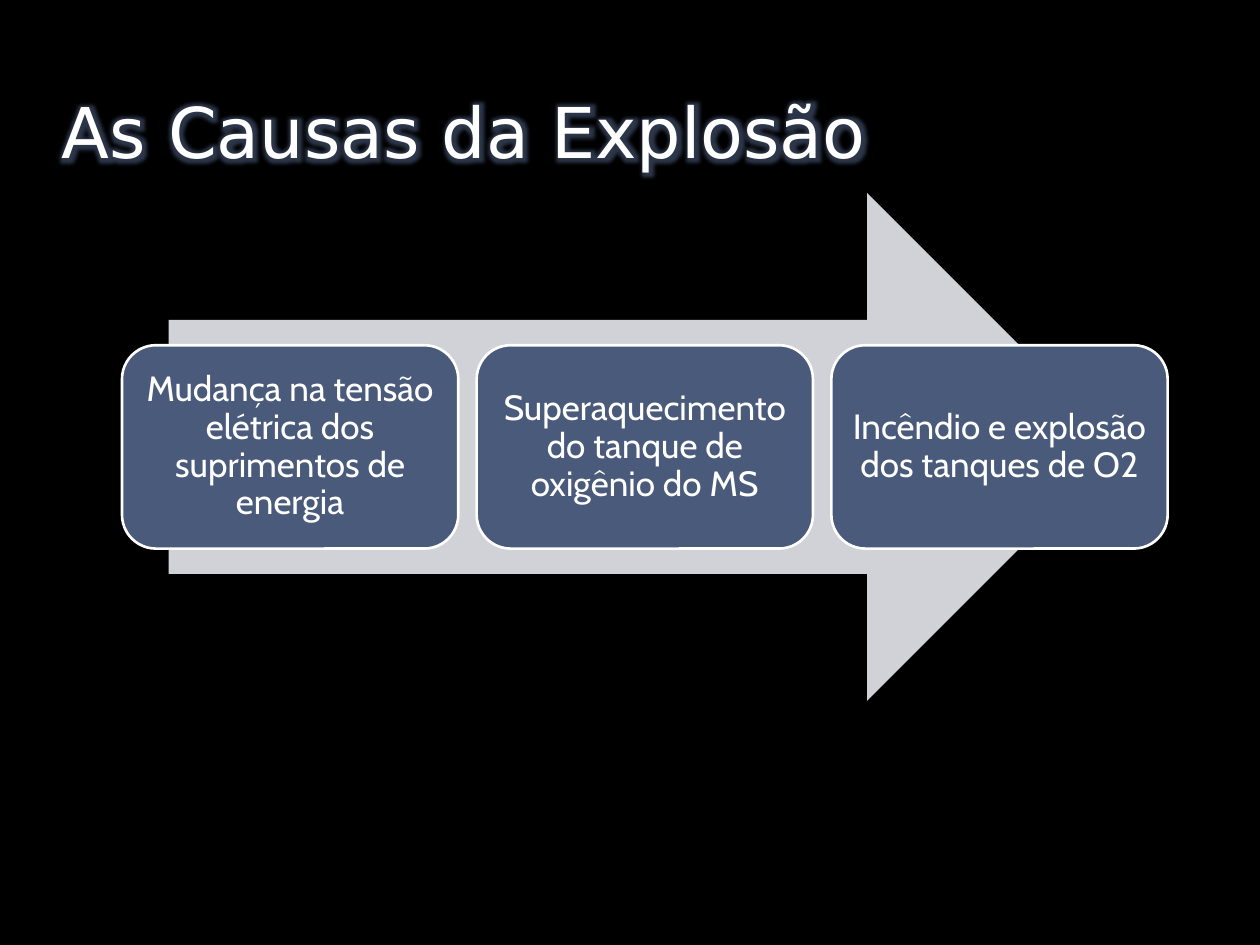
import pptx
import pptx.dml.color
import pptx.enum.shapes
import pptx.enum.text
import pptx.oxml
import pptx.util
from pptx.util import Cm

TITLE = "As Causas da Explosão"
CAUSES = [
    "Mudança na tensão elétrica dos suprimentos de energia",
    "Superaquecimento do tanque de oxigênio do MS",
    "Incêndio e explosão dos tanques de O2",
]

BLACK, WHITE, GREY, BLUE = "000000", "FFFFFF", "D0D2D7", "4A5A7A"
ARROW_LEFT, ARROW_TOP, ARROW_WIDTH, ARROW_HEIGHT = 3.4, 3.89, 19.2, 10.24
BOX_LEFT, BOX_WIDTH, BOX_HEIGHT, BOX_GAP = 2.46, 6.78, 4.1, 0.37
BOX_TOP = ARROW_TOP + (ARROW_HEIGHT - BOX_HEIGHT) / 2
GLOW = (
    '<a:effectLst xmlns:a="http://schemas.openxmlformats.org/drawingml/2006/main">'
    f'<a:glow rad="101600"><a:srgbClr val="{BLUE}"><a:alpha val="60000"/></a:srgbClr></a:glow>'
    "</a:effectLst>"
)


def paint(color_format, color):
    """Fill a FillFormat with a solid hex colour."""
    color_format.solid()
    color_format.fore_color.rgb = pptx.dml.color.RGBColor.from_string(color)


def add_run(paragraph, text, font_name, size):
    run = paragraph.add_run()
    run.text = text
    paint(run.font.fill, WHITE)
    run.font.name = font_name
    run.font.size = pptx.util.Pt(size)
    return run


def add_title(slide):
    title = slide.shapes.title
    title.left, title.top, title.width, title.height = Cm(0.99), Cm(0.64), Cm(21.34), Cm(2.97)
    frame = title.text_frame
    frame.word_wrap = True
    frame.auto_size = pptx.enum.text.MSO_AUTO_SIZE.NONE
    frame.vertical_anchor = pptx.enum.text.MSO_ANCHOR.BOTTOM
    paragraph = frame.paragraphs[0]
    paragraph.alignment = pptx.enum.text.PP_ALIGN.LEFT
    run = add_run(paragraph, TITLE, "DejaVu Sans", 40)
    # The glow must stand directly after the solid fill of the run.
    run.font._element.insert(1, pptx.oxml.parse_xml(GLOW))


def add_filled_shape(slide, kind, left, top, width, height, color):
    shape = slide.shapes.add_shape(kind, Cm(left), Cm(top), Cm(width), Cm(height))
    shape.shadow.inherit = False
    paint(shape.fill, color)
    return shape


def add_cause(slide, index, text):
    box = add_filled_shape(
        slide, pptx.enum.shapes.MSO_SHAPE.ROUNDED_RECTANGLE,
        BOX_LEFT + index * (BOX_WIDTH + BOX_GAP), BOX_TOP, BOX_WIDTH, BOX_HEIGHT, BLUE)
    paint(box.line.fill, WHITE)
    box.line.width = pptx.util.Pt(1.5)
    frame = box.text_frame
    frame.word_wrap = True
    frame.vertical_anchor = pptx.enum.text.MSO_ANCHOR.MIDDLE
    frame.margin_left = frame.margin_right = frame.margin_top = frame.margin_bottom = Cm(0.2)
    paragraph = frame.paragraphs[0]
    paragraph.alignment = pptx.enum.text.PP_ALIGN.CENTER
    paragraph.line_spacing = 0.9
    add_run(paragraph, text, "Cabin", 20)


def main():
    presentation = pptx.Presentation()
    presentation.slide_width, presentation.slide_height = Cm(25.4), Cm(19.05)
    slide = presentation.slides.add_slide(presentation.slide_layouts[5])
    paint(slide.background.fill, BLACK)
    add_title(slide)
    arrow = add_filled_shape(
        slide, pptx.enum.shapes.MSO_SHAPE.RIGHT_ARROW,
        ARROW_LEFT, ARROW_TOP, ARROW_WIDTH, ARROW_HEIGHT, GREY)
    arrow.line.fill.background()
    for index, text in enumerate(CAUSES):
        add_cause(slide, index, text)
    presentation.save("out.pptx")


if __name__ == "__main__":
    main()
